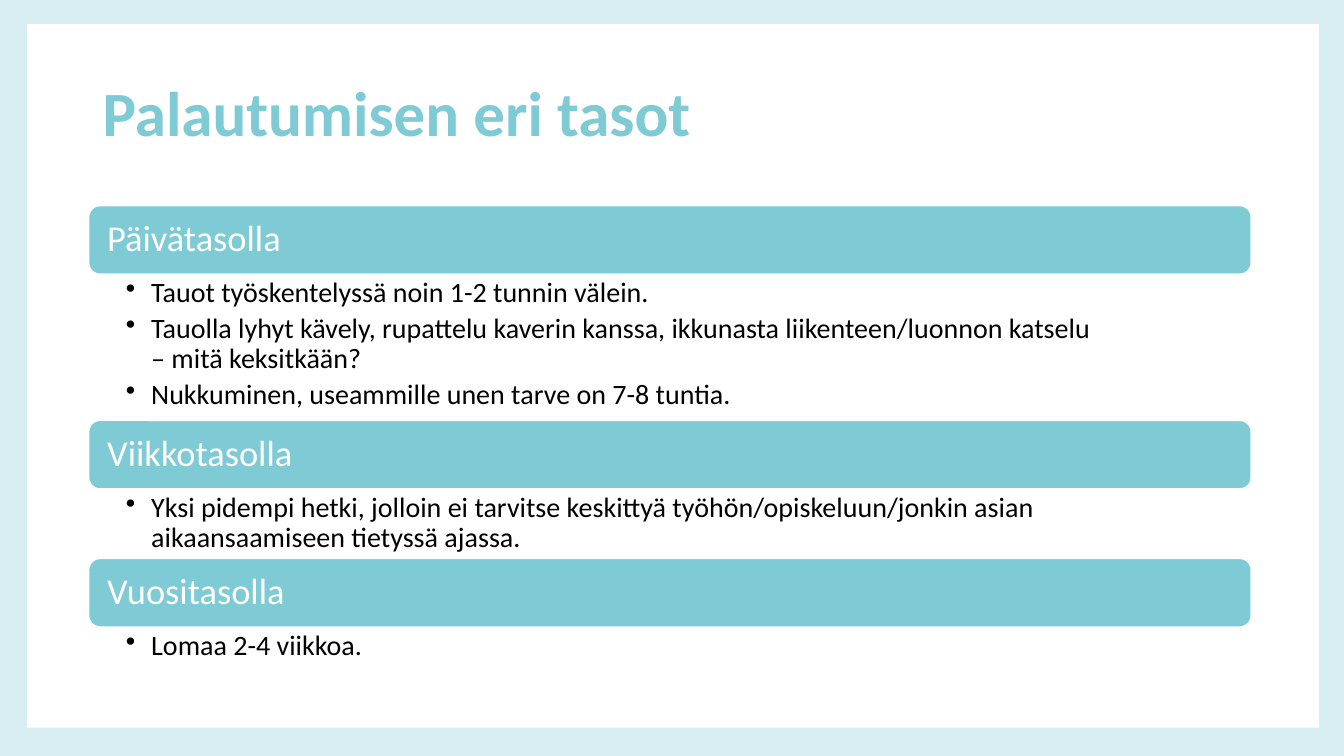
from dataclasses import dataclass

from lxml import etree
from pptx import Presentation
from pptx import util as u
from pptx.dml.color import RGBColor
from pptx.enum import shapes, text
from pptx.oxml import ns


@dataclass(frozen=True)
class Theme:
    font: str = "Calibri"
    accent: str = "7ECAD5"
    paper: str = "FFFFFF"
    ink: str = "000000"
    title_size: int = 45
    level_size: int = 26
    advice_size: int = 20


class SlideBuilder:
    def __init__(self, slide, theme):
        self.slide = slide
        self.theme = theme

    def panel(self, kind, box, color, opacity=None, border=None):
        """Draw a filled shape, optionally translucent or outlined."""
        panel = self.slide.shapes.add_shape(kind, *map(u.Inches, box))
        panel.shadow.inherit = False
        panel.fill.solid()
        panel.fill.fore_color.rgb = RGBColor.from_string(color)
        if opacity is not None:
            color_node = panel.fill._xPr.find(".//" + ns.qn("a:srgbClr"))
            etree.SubElement(color_node, ns.qn("a:alpha"), val=str(opacity * 1000))
        if border:
            panel.line.color.rgb = RGBColor.from_string(border)
            panel.line.width = u.Pt(1)
        else:
            panel.line.fill.background()
        return panel

    def frame(self, holder, anchor, left, top, right):
        """Set wrapping, anchor and insets of a text frame."""
        frame = holder.text_frame
        frame.word_wrap = True
        frame.vertical_anchor = anchor
        frame.margin_left, frame.margin_right = u.Inches(left), u.Inches(right)
        frame.margin_top = frame.margin_bottom = u.Inches(top)
        return frame

    def style(self, paragraph, size, color, bold=False):
        paragraph.alignment = text.PP_ALIGN.LEFT
        paragraph.line_spacing = 0.9
        for run in paragraph.runs:
            run.font.name = self.theme.font
            run.font.size = u.Pt(size)
            run.font.bold = bold
            run.font.color.rgb = RGBColor.from_string(color)

    def title(self, wording, box):
        heading = self.slide.shapes.add_textbox(*map(u.Inches, box))
        frame = self.frame(heading, text.MSO_ANCHOR.MIDDLE, 0.1, 0.05, 0.1)
        frame.text = wording
        self.style(frame.paragraphs[0], self.theme.title_size, self.theme.accent, True)

    def level_bar(self, wording, box):
        bar = self.panel(shapes.MSO_SHAPE.ROUNDED_RECTANGLE, box,
                         self.theme.accent, border=self.theme.paper)
        frame = self.frame(bar, text.MSO_ANCHOR.MIDDLE, 0.15, 0.11, 0.11)
        frame.text = wording
        self.style(frame.paragraphs[0], self.theme.level_size, self.theme.paper)

    def advice_list(self, items, box):
        advice = self.slide.shapes.add_textbox(*map(u.Inches, box))
        frame = self.frame(advice, text.MSO_ANCHOR.TOP, 0.37, 0.04, 0.25)
        for index, item in enumerate(items):
            paragraph = frame.add_paragraph() if index else frame.paragraphs[0]
            paragraph.text = item
            properties = paragraph._p.get_or_add_pPr()
            properties.set("marL", str(u.Inches(0.25)))
            properties.set("indent", str(-u.Inches(0.25)))
            etree.SubElement(properties, ns.qn("a:buChar"), char="•")
            paragraph.space_after = u.Pt(4)
            self.style(paragraph, self.theme.advice_size, self.theme.ink)


# Each level: heading, height of its list, list items
LEVELS = [
    ("Päivätasolla", 1.45, [
        "Tauot työskentelyssä noin 1-2 tunnin välein.",
        "Tauolla lyhyt kävely, rupattelu kaverin kanssa, "
        "ikkunasta liikenteen/luonnon katselu \v– mitä keksitkään?",
        "Nukkuminen, useammille unen tarve on 7-8 tuntia.",
    ]),
    ("Viikkotasolla", 0.69, [
        "Yksi pidempi hetki, jolloin ei tarvitse keskittyä "
        "työhön/opiskeluun/jonkin asian aikaansaamiseen tietyssä ajassa.",
    ]),
    ("Vuositasolla", 0.47, ["Lomaa 2-4 viikkoa."]),
]
LEFT, WIDTH, BAR_HEIGHT = 0.88, 11.53, 0.68


def main():
    deck = Presentation()
    deck.slide_width, deck.slide_height = u.Inches(13.33), u.Inches(7.5)
    theme = Theme()
    builder = SlideBuilder(deck.slides.add_slide(deck.slide_layouts[6]), theme)

    # Tinted border around a white page
    rectangle = shapes.MSO_SHAPE.RECTANGLE
    builder.panel(rectangle, (0, 0, 13.33, 7.5), theme.accent, opacity=30)
    builder.panel(rectangle, (0.27, 0.24, 12.81, 6.98), theme.paper)

    # Title
    builder.title("Palautumisen eri tasot", (0.92, 0.63, 11.5, 1.05))

    # Recovery levels, stacked from the top
    top = 2.04
    for heading, list_height, items in LEVELS:
        builder.level_bar(heading, (LEFT, top, WIDTH, BAR_HEIGHT))
        top += BAR_HEIGHT
        builder.advice_list(items, (LEFT, top, WIDTH, list_height))
        top += list_height

    deck.save("out.pptx")


if __name__ == "__main__":
    main()
